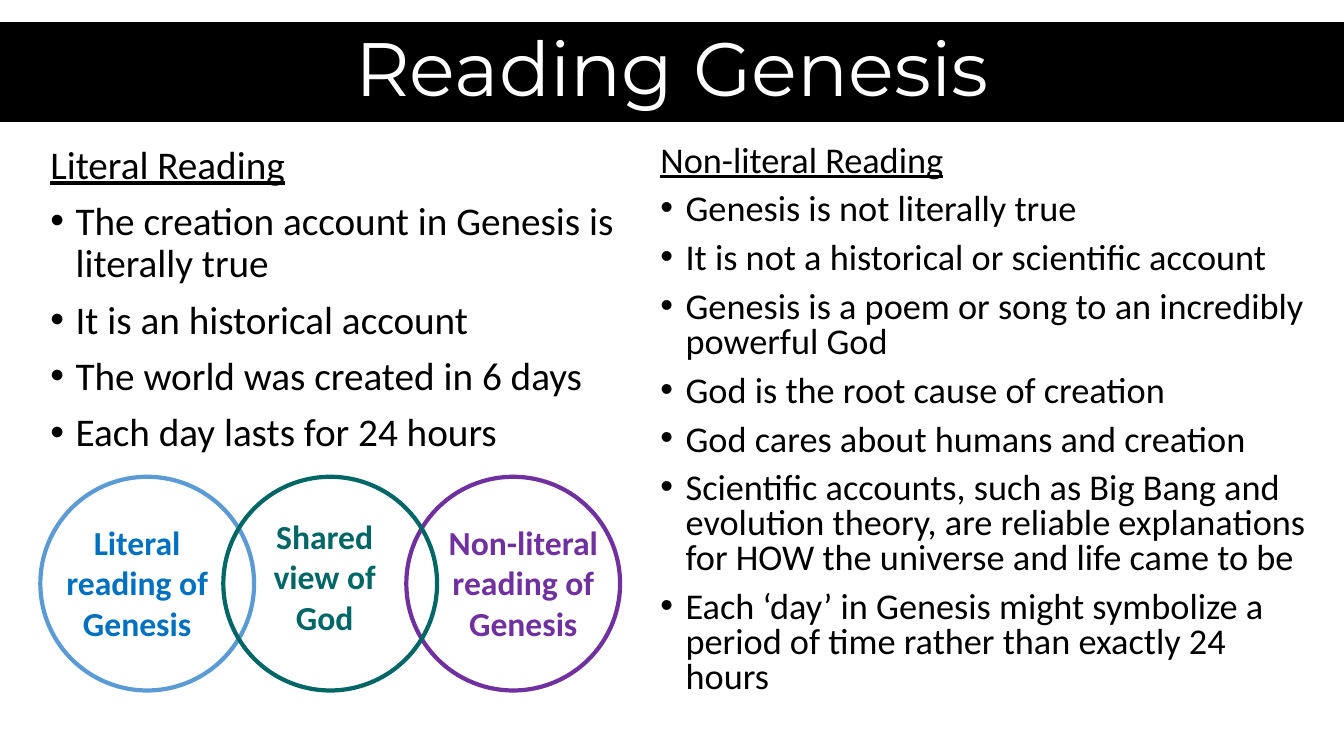
from lxml.etree import SubElement
from pptx import Presentation
from pptx.dml.color import RGBColor
from pptx.enum.shapes import MSO_SHAPE
from pptx.enum.text import MSO_ANCHOR, MSO_AUTO_SIZE, PP_ALIGN
from pptx.oxml.ns import qn
from pptx.util import Inches, Pt

COLORS = {
    "black": "000000", "white": "FFFFFF", "sky": "5B9BD5", "blue": "0070C0",
    "purple": "7030A0", "teal": "006666",
}
TITLE = "Reading Genesis"
# Heading, points, position and size, text size, line spacing
READINGS = [
    ("Literal Reading", [
        "The creation account in Genesis is literally true",
        "It is an historical account",
        "The world was created in 6 days",
        "Each day lasts for 24 hours",
    ], (0.4, 1.39, 6.27, 3.22), 28, 0.9),
    ("Non-literal Reading", [
        "Genesis is not literally true",
        "It is not a historical or scientific account",
        "Genesis is a poem or song to an incredibly powerful God",
        "God is the root cause of creation",
        "God cares about humans and creation",
        "Scientific accounts, such as Big Bang and evolution theory, are reliable "
        "explanations for HOW the universe and life came to be",
        "Each ‘day’ in Genesis might symbolize a period of time rather than exactly 24 hours",
    ], (6.45, 1.39, 6.66, 6.11), 25.9, 0.8),
]
# Column, line color, fill, label, label color, label left and top
CIRCLES = [
    (0, "sky", "white", "Literal reading of Genesis", "blue", 0.5, 5.13),
    (2, "purple", None, "Non-literal reading of Genesis", "purple", 4.33, 5.13),
    (1, "teal", None, "Shared view of God", "teal", 2.36, 5.07),
]
CIRCLE_LEFT, CIRCLE_TOP, CIRCLE_SIZE, CIRCLE_STEP = 0.4, 4.73, 2.12, 1.815
LABEL_SIZE = (1.72, 1.31)


def rgb(name):
    return RGBColor.from_string(COLORS[name])


def place(shape, left, top, width, height):
    shape.left, shape.top = Inches(left), Inches(top)
    shape.width, shape.height = Inches(width), Inches(height)


def write(paragraph, text, size, color="black", font="Calibri", bold=False,
          underline=False, align=PP_ALIGN.LEFT, line_spacing=1.0, space_before=0):
    paragraph.alignment = align
    paragraph.line_spacing = line_spacing
    paragraph.space_before = Pt(space_before)
    run = paragraph.add_run()
    run.text = text
    run.font.name, run.font.size = font, Pt(size)
    run.font.bold, run.font.underline = bold, underline
    run.font.color.rgb = rgb(color)


def set_bullet(paragraph, bulleted):
    properties = paragraph._p.get_or_add_pPr()
    indent = Inches(0.25) if bulleted else 0
    properties.set("marL", str(indent))
    properties.set("indent", str(-indent))
    if bulleted:
        SubElement(properties, qn("a:buFont"), typeface="Arial")
        SubElement(properties, qn("a:buChar"), char="•")
    else:
        SubElement(properties, qn("a:buNone"))


def add_title(slide):
    title = slide.shapes.title
    place(title, 0, 0.22, 13.33, 0.99)
    title.fill.solid()
    title.fill.fore_color.rgb = rgb("black")
    frame = title.text_frame
    frame.auto_size = MSO_AUTO_SIZE.NONE
    frame.vertical_anchor = MSO_ANCHOR.MIDDLE
    write(frame.paragraphs[0], TITLE, 54, color="white", font="Montserrat",
          align=PP_ALIGN.CENTER, line_spacing=0.9)


def add_reading(placeholder, heading, points, box, size, line_spacing):
    place(placeholder, *box)
    frame = placeholder.text_frame
    frame.auto_size = MSO_AUTO_SIZE.NONE
    for index, text in enumerate([heading, *points]):
        paragraph = frame.paragraphs[0] if index == 0 else frame.add_paragraph()
        write(paragraph, text, size, underline=index == 0,
              line_spacing=line_spacing, space_before=10)
        set_bullet(paragraph, index > 0)


def add_circle(slide, column, line, fill):
    circle = slide.shapes.add_shape(
        MSO_SHAPE.OVAL, Inches(CIRCLE_LEFT + column * CIRCLE_STEP), Inches(CIRCLE_TOP),
        Inches(CIRCLE_SIZE), Inches(CIRCLE_SIZE))
    circle.shadow.inherit = False
    circle.line.color.rgb = rgb(line)
    circle.line.width = Pt(3)
    if fill:
        circle.fill.solid()
        circle.fill.fore_color.rgb = rgb(fill)
    else:
        circle.fill.background()


def add_label(slide, text, color, left, top):
    width, height = LABEL_SIZE
    label = slide.shapes.add_textbox(Inches(left), Inches(top), Inches(width), Inches(height))
    frame = label.text_frame
    frame.word_wrap = True
    frame.auto_size = MSO_AUTO_SIZE.SHAPE_TO_FIT_TEXT
    write(frame.paragraphs[0], text, 24, color=color, bold=True, align=PP_ALIGN.CENTER)


def main():
    presentation = Presentation()
    presentation.slide_width, presentation.slide_height = Inches(13.33), Inches(7.5)
    two_content = presentation.slide_layouts[3]
    slide = presentation.slides.add_slide(two_content)
    add_title(slide)
    for index, reading in enumerate(READINGS, start=1):
        add_reading(slide.placeholders[index], *reading)
    for column, line, fill, *_ in CIRCLES:
        add_circle(slide, column, line, fill)
    for *_, text, color, left, top in CIRCLES:
        add_label(slide, text, color, left, top)
    presentation.save("out.pptx")


if __name__ == "__main__":
    main()
